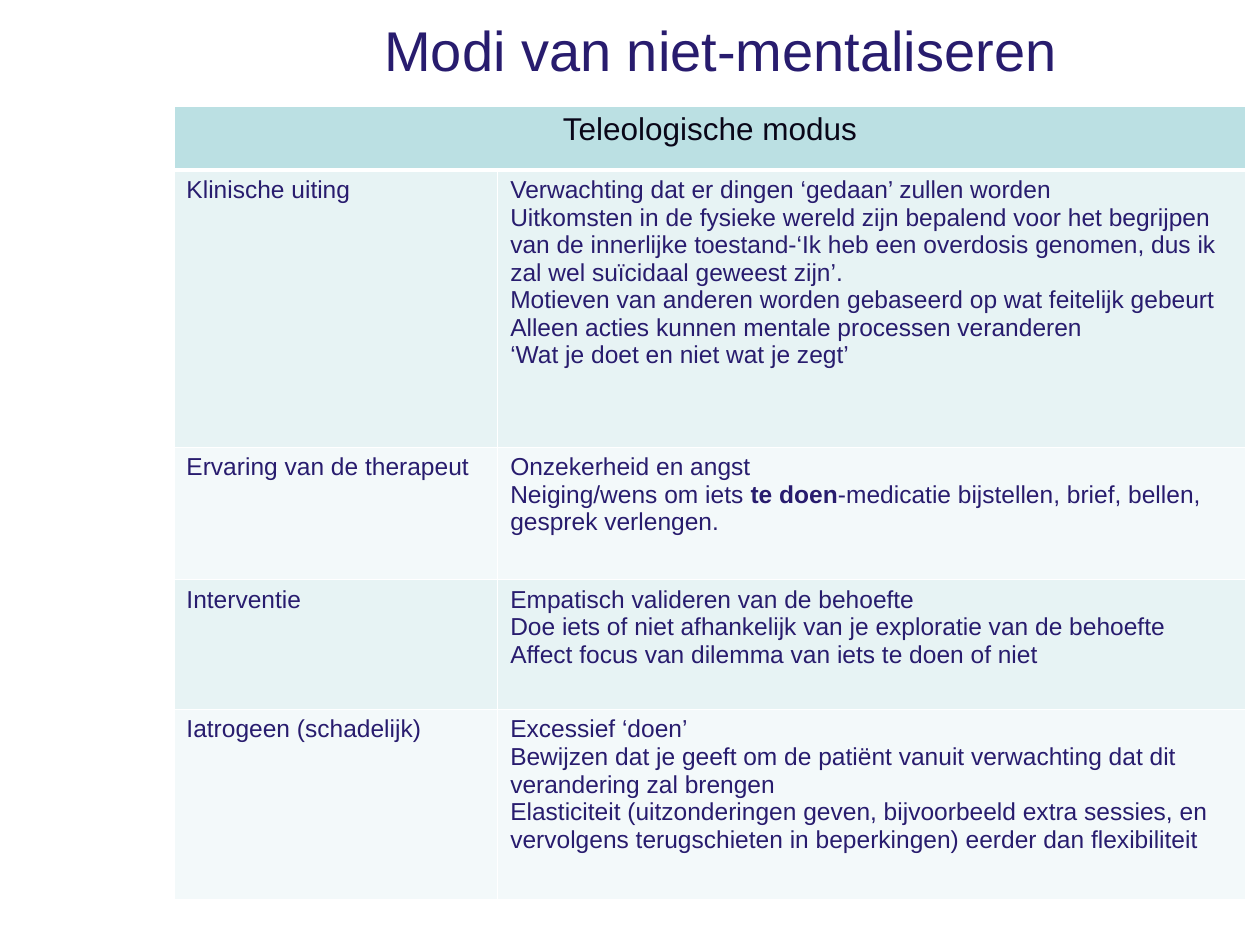
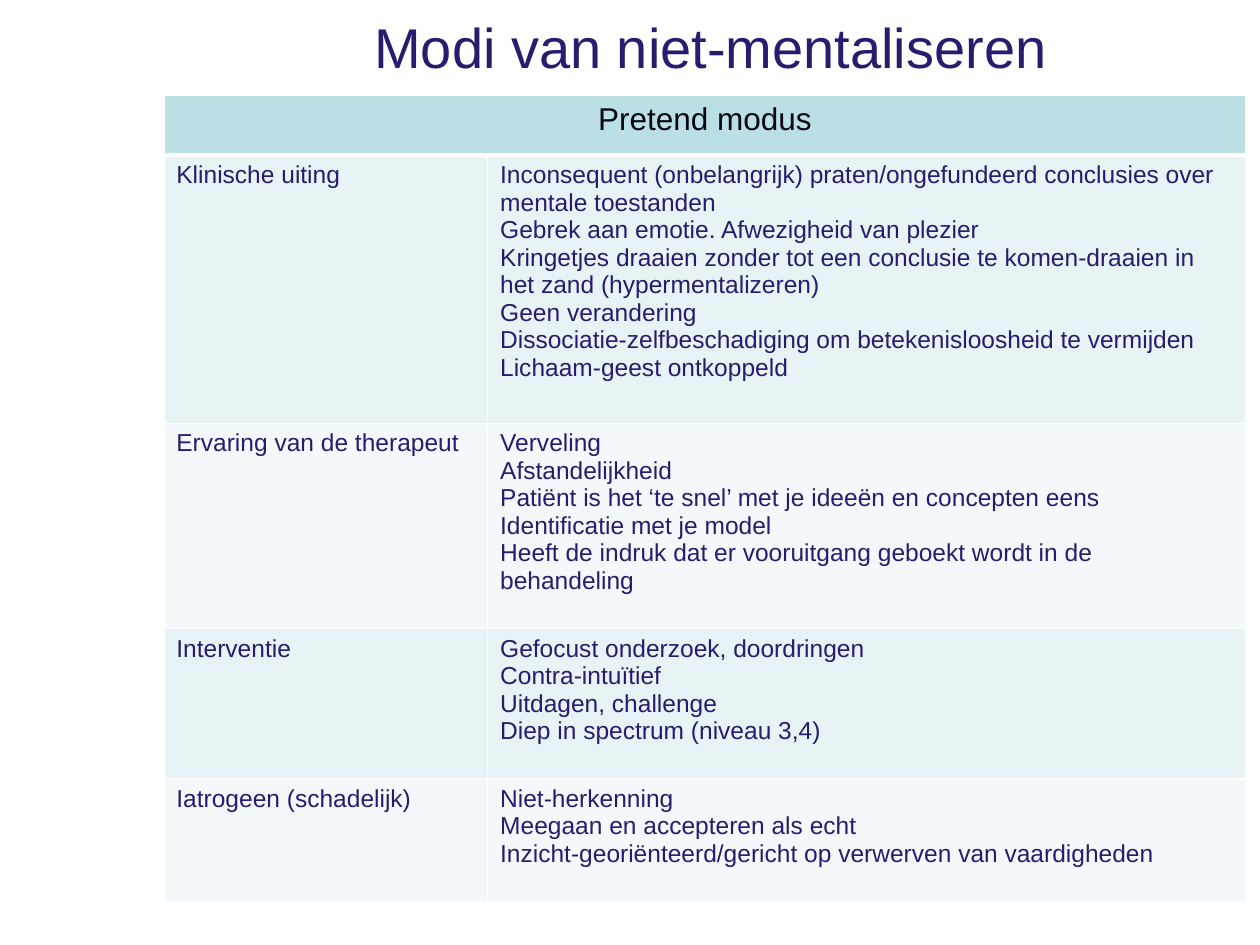
"""Build two slides with tables on modes of non-mentalising."""
import dataclasses
import itertools

import lxml.etree
import pptx
import pptx.dml.color
import pptx.enum.text
import pptx.oxml.ns
import pptx.util

Inches, Pt = pptx.util.Inches, pptx.util.Pt
Color = pptx.dml.color.RGBColor.from_string
Align = pptx.enum.text.PP_ALIGN


@dataclasses.dataclass(frozen=True)
class Theme:
    font: str = "Arial"
    ink: str = "281C6E"
    dark: str = "090618"
    head: str = "BBE0E3"
    bands: tuple = ("E7F3F4", "F3F9FA")
    line: str = "FFFFFF"
    title: int = 32
    mode: int = 18
    body: int = 14


theme = Theme()
labels = ["Klinische uiting", "Ervaring van de therapeut", "Interventie", "Iatrogeen (schadelijk)"]
slides = [
    {
        "mode": "Teleologische modus",
        "title": (2.95, 0.36, 6.39, 0.35),
        "table": (1.38, 0.84),
        "cols": (2.57, 5.94),
        "rows": (0.51, 2.2, 1.05, 1.03, 1.51),
        "texts": [
            ["Verwachting dat er dingen ‘gedaan’ zullen worden",
             "Uitkomsten in de fysieke wereld zijn bepalend voor het begrijpen van de innerlijke "
             "toestand-‘Ik heb een overdosis genomen, dus ik zal wel suïcidaal geweest zijn’.",
             "Motieven van anderen worden gebaseerd op wat feitelijk gebeurt",
             "Alleen acties kunnen mentale processen veranderen",
             "‘Wat je doet en niet wat je zegt’"],
            ["Onzekerheid en angst",
             "Neiging/wens om iets *te doen*-medicatie bijstellen, brief, bellen, gesprek verlengen."],
            ["Empatisch valideren van de behoefte",
             "Doe iets of niet afhankelijk van je exploratie van de behoefte",
             "Affect focus van dilemma van iets te doen of niet"],
            ["Excessief ‘doen’",
             "Bewijzen dat je geeft om de patiënt vanuit verwachting dat dit verandering zal brengen",
             "Elasticiteit (uitzonderingen geven, bijvoorbeeld extra sessies, en vervolgens "
             "terugschieten in beperkingen) eerder dan flexibiliteit"],
        ],
    },
    {
        "mode": "Pretend modus",
        "title": (2.87, 0.25, 6.63, 0.43),
        "table": (1.3, 0.76),
        "cols": (2.57, 6.02),
        "rows": (0.47, 2.13, 1.63, 1.19, 0.98),
        "texts": [
            ["Inconsequent (onbelangrijk) praten/ongefundeerd conclusies over mentale toestanden",
             "Gebrek aan emotie. Afwezigheid van plezier",
             "Kringetjes draaien zonder tot een conclusie te komen-draaien in het zand "
             "(hypermentalizeren)",
             "Geen verandering",
             "Dissociatie-zelfbeschadiging om betekenisloosheid te vermijden",
             "Lichaam-geest ontkoppeld"],
            ["Verveling",
             "Afstandelijkheid",
             "Patiënt is het ‘te snel’ met je ideeën en concepten eens",
             "Identificatie met je model",
             "Heeft de indruk dat er vooruitgang geboekt wordt in de behandeling"],
            ["Gefocust onderzoek, doordringen",
             "Contra-intuïtief",
             "Uitdagen, challenge",
             "Diep in spectrum (niveau 3,4)"],
            ["Niet-herkenning",
             "Meegaan en accepteren als echt",
             "Inzicht-georiënteerd/gericht op verwerven van vaardigheden"],
        ],
    },
]


def write(frame, lines, size, color, align=Align.LEFT):
    """Write one paragraph per line, with bold between asterisks."""
    for i, line in enumerate(lines):
        para = frame.paragraphs[0] if i == 0 else frame.add_paragraph()
        para.alignment = align
        para.font.name, para.font.size = theme.font, Pt(size)
        para.font.color.rgb = Color(color)
        for j, part in enumerate(line.split("*")):
            run = para.add_run()
            run.text = part
            if j % 2:
                run.font.bold = True


def paint(cell, fill, base=1):
    """Give a cell its borders and its fill."""
    props = cell._tc.get_or_add_tcPr()
    for side, width in zip("LRTB", (1, 1, 1, base)):
        line = lxml.etree.SubElement(props, pptx.oxml.ns.qn(f"a:ln{side}"), w=str(Pt(width)))
        solid = lxml.etree.SubElement(line, pptx.oxml.ns.qn("a:solidFill"))
        lxml.etree.SubElement(solid, pptx.oxml.ns.qn("a:srgbClr"), val=theme.line)
    cell.fill.solid()
    cell.fill.fore_color.rgb = Color(fill)


deck = pptx.Presentation()
deck.slide_width, deck.slide_height = Inches(10), Inches(7.5)

for data in slides:
    slide = deck.slides.add_slide(deck.slide_layouts[5])
    title = slide.shapes.title
    title.left, title.top, title.width, title.height = map(Inches, data["title"])
    frame = title.text_frame
    frame.auto_size = pptx.enum.text.MSO_AUTO_SIZE.NONE
    frame.vertical_anchor = pptx.enum.text.MSO_ANCHOR.BOTTOM
    write(frame, ["Modi van niet-mentaliseren"], theme.title, theme.ink)

    cols, rows = data["cols"], data["rows"]
    table = slide.shapes.add_table(
        len(rows), len(cols), *map(Inches, (*data["table"], sum(cols), sum(rows)))
    ).table
    for col, width in zip(table.columns, cols):
        col.width = Inches(width)
    for row, height in zip(table.rows, rows):
        row.height = Inches(height)

    head = table.cell(0, 0)
    head.merge(table.cell(0, 1))
    for cell in table.rows[0].cells:
        paint(cell, theme.head, 3)
    write(head.text_frame, [data["mode"]], theme.mode, theme.dark, Align.CENTER)

    bands = itertools.cycle(theme.bands)
    for i, (label, lines, band) in enumerate(zip(labels, data["texts"], bands), 1):
        for cell, texts in zip(table.rows[i].cells, ([label], lines)):
            paint(cell, band)
            write(cell.text_frame, texts, theme.body, theme.ink)

deck.save("out.pptx")
